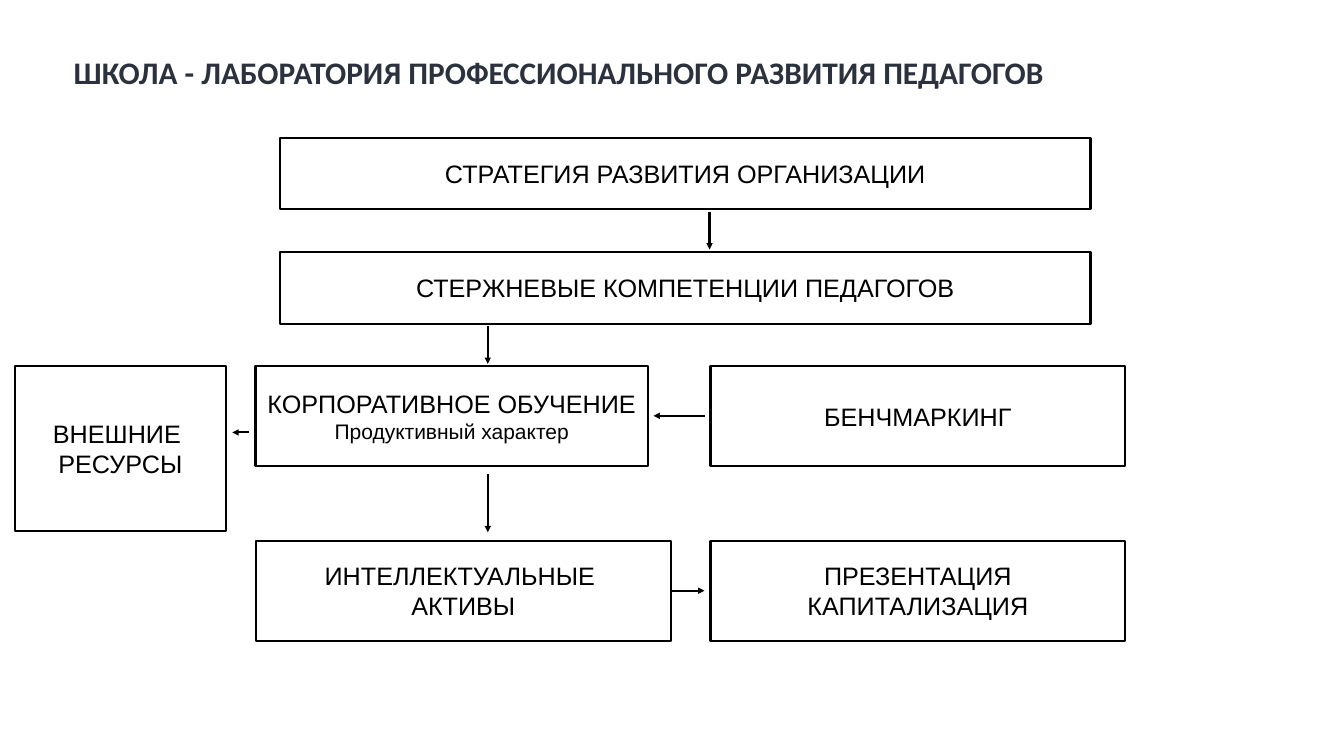
from lxml.etree import SubElement
from pptx import Presentation
from pptx.dml.color import RGBColor
from pptx.enum.shapes import MSO_CONNECTOR, MSO_SHAPE
from pptx.enum.text import MSO_ANCHOR, PP_ALIGN
from pptx.oxml.ns import qn
from pptx.util import Inches, Pt

WIDTH, HEIGHT = 26.67, 15
INK, TITLE_INK = "000000", "2C323D"
TITLE = "ШКОЛА - ЛАБОРАТОРИЯ ПРОФЕССИОНАЛЬНОГО РАЗВИТИЯ ПЕДАГОГОВ"

COLUMNS = {"outer": (0.29, 4.2), "wide": (5.56, 16.08), "training": (5.07, 7.79),
           "left": (5.08, 8.23), "right": (14.1, 8.23)}
ROWS = {"strategy": (2.73, 1.42), "competence": (5, 1.42), "training": (7.27, 1.98),
        "outer": (7.27, 3.26), "assets": (10.73, 1.98)}

BOXES = {
    "strategy": ("wide", "strategy", [("СТРАТЕГИЯ РАЗВИТИЯ ОРГАНИЗАЦИИ", 36)]),
    "training": ("training", "training",
                 [("КОРПОРАТИВНОЕ ОБУЧЕНИЕ", 36), ("Продуктивный характер", 30)]),
    "competence": ("wide", "competence", [("СТЕРЖНЕВЫЕ КОМПЕТЕНЦИИ ПЕДАГОГОВ", 36)]),
    "benchmarking": ("right", "training", [("БЕНЧМАРКИНГ", 36)]),
    "resources": ("outer", "outer", [("ВНЕШНИЕ ", 36), ("РЕСУРСЫ", 36)]),
    "presentation": ("right", "assets", [("ПРЕЗЕНТАЦИЯ", 36), ("КАПИТАЛИЗАЦИЯ", 36)]),
    "assets": ("left", "assets", [("ИНТЕЛЛЕКТУАЛЬНЫЕ ", 36), ("АКТИВЫ", 36)]),
}

STRATEGY_X, TRAINING_X = 14.08, 9.68
ARROWS = [
    ((STRATEGY_X, 4.2), (STRATEGY_X, 4.95), None),
    ((13.99, 8.25), (12.97, 8.25), None),
    ((TRAINING_X, 9.41), (TRAINING_X, 10.56), None),
    ((TRAINING_X, 6.46), (TRAINING_X, 7.22), None),
    ((4.95, 8.58), (4.61, 8.58), None),
    ((13.31, 11.72), (13.98, 11.72), ("assets", 3)),
]


def color(hex_code):
    return RGBColor.from_string(hex_code)


def write(shape, lines, font="Arial", ink=INK, bold=False, align=PP_ALIGN.CENTER,
          inset=0, spacing=None):
    frame = shape.text_frame
    frame.word_wrap = True
    frame.vertical_anchor = MSO_ANCHOR.MIDDLE
    frame.margin_left = frame.margin_right = Inches(inset)
    frame.margin_top = frame.margin_bottom = Inches(inset)
    for index, (text, size) in enumerate(lines):
        paragraph = frame.add_paragraph() if index else frame.paragraphs[0]
        paragraph.alignment = align
        paragraph.line_spacing = spacing
        run = paragraph.add_run()
        run.text = text
        run.font.name, run.font.size, run.font.bold = font, Pt(size), bold
        run.font.color.rgb = color(ink)


def draw_line(line):
    line.color.rgb = color(INK)
    line.width = Pt(3)


def add_box(slide, column, row, lines):
    (left, width), (top, height) = COLUMNS[column], ROWS[row]
    box = slide.shapes.add_shape(MSO_SHAPE.RECTANGLE, *map(Inches, (left, top, width, height)))
    box.shadow.inherit = False
    box.fill.background()
    draw_line(box.line)
    write(box, lines)
    return box


def add_arrow(slide, start, end, joined):
    arrow = slide.shapes.add_connector(MSO_CONNECTOR.STRAIGHT, *map(Inches, start + end))
    if joined:
        arrow.begin_connect(*joined)
    draw_line(arrow.line)
    SubElement(arrow.line._get_or_add_ln(), qn("a:tailEnd"), type="triangle")
    SubElement(arrow._element.spPr, qn("a:effectLst"))


def main():
    """Build the slide on the teachers' professional development scheme."""
    deck = Presentation()
    deck.slide_width, deck.slide_height = Inches(WIDTH), Inches(HEIGHT)
    slide = deck.slides.add_slide(deck.slide_layouts[6])
    title = slide.shapes.add_textbox(*map(Inches, (WIDTH * 0.05, HEIGHT * 0.04,
                                                   WIDTH * 0.9, 1.74)))
    write(title, [(TITLE, 44.8)], font="Calibri", ink=TITLE_INK, bold=True,
          align=PP_ALIGN.LEFT, inset=0.13, spacing=0.9)
    boxes = {name: add_box(slide, *parts) for name, parts in BOXES.items()}
    for start, end, joined in ARROWS:
        add_arrow(slide, start, end, joined and (boxes[joined[0]], joined[1]))
    deck.save("out.pptx")


if __name__ == "__main__":
    main()
